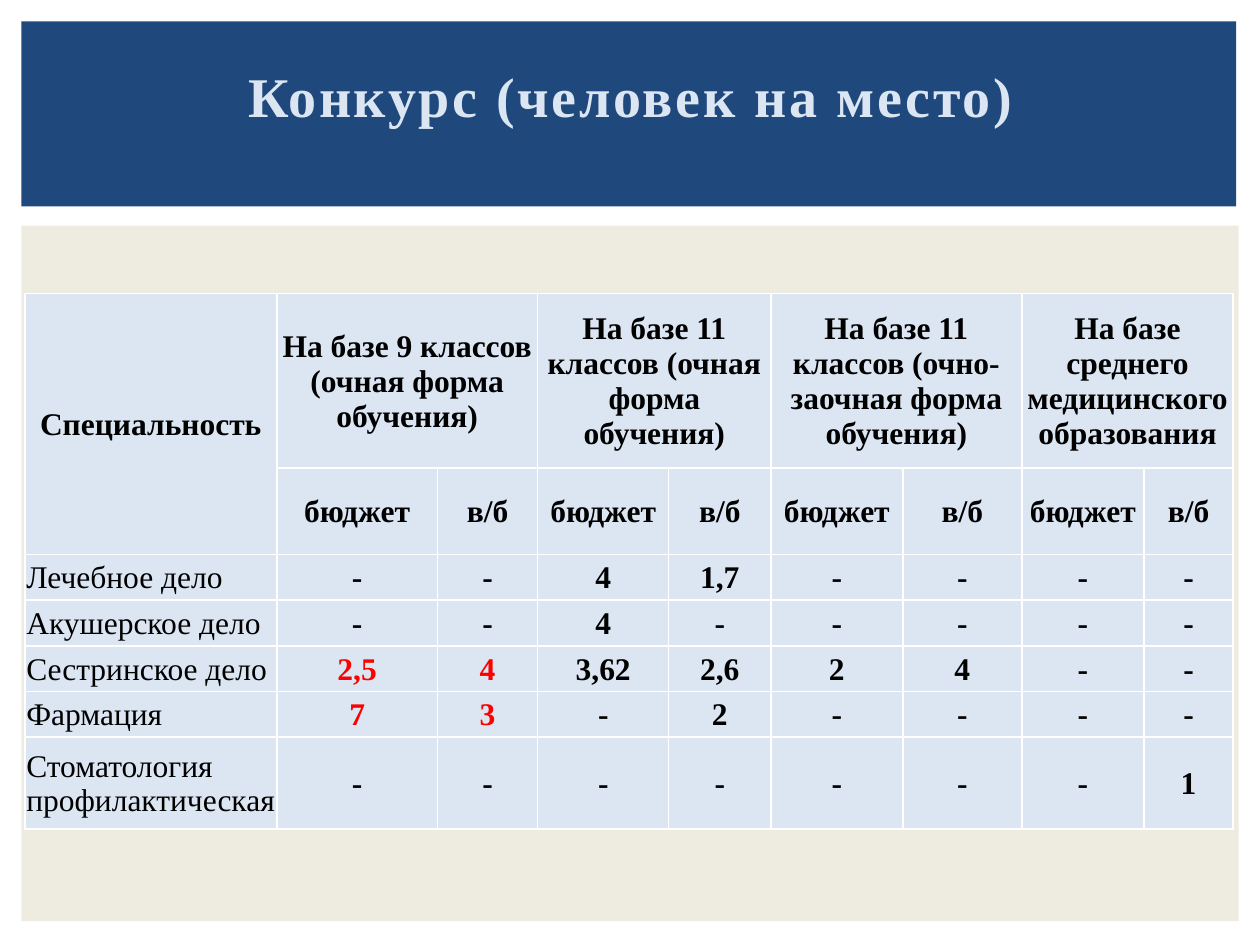
from lxml.etree import SubElement
from pptx import Presentation
from pptx.dml.color import RGBColor
from pptx.enum.shapes import MSO_SHAPE as SHAPE
from pptx.enum.text import MSO_ANCHOR as ANCHOR, PP_ALIGN as ALIGN
from pptx.oxml.ns import qn
from pptx.util import Cm, Pt

FONT = "Times New Roman"
COLORS = {
    "banner": "1F497D",
    "panel": "EEECE1",
    "pale": "DCE6F2",
    "text": "000000",
    "accent": "FF0000",
    "border": "FFFFFF",
}

COL_WIDTHS = [5.08, 3.24, 2.02, 2.64, 2.06, 2.66, 2.4, 2.46, 1.8]
ROW_HEIGHTS = [3.51, 1.75, 0.92, 0.92, 0.92, 0.92, 1.85]
GROUPS = [
    "На базе 9 классов (очная форма обучения)",
    "На базе 11 классов (очная форма обучения)",
    "На базе 11 классов (очно-заочная форма обучения)",
    "На базе среднего медицинского образования",
]
PLACES = ["бюджет", "в/б"]
SPECIALTIES = [
    ("Лечебное дело", "- - 4 1,7 - - - -"),
    ("Акушерское дело", "- - 4 - - - - -"),
    ("Сестринское дело", "2,5 4 3,62 2,6 2 4 - -"),
    ("Фармация", "7 3 - 2 - - - -"),
    ("Стоматология профилактическая", "- - - - - - - 1"),
]


def rgb(name):
    return RGBColor.from_string(COLORS[name])


def write(tf, text, size=18, color="text", bold=True, align=ALIGN.CENTER, spacing=None):
    p = tf.paragraphs[0]
    p.alignment = align
    r = p.add_run()
    r.text = text
    r.font.name, r.font.size, r.font.bold = FONT, Pt(size), bold
    r.font.color.rgb = rgb(color)
    if spacing:
        r.font._element.set("spc", str(int(spacing * 100)))
    return p


def add_block(slide, left, top, width, height, color):
    sp = slide.shapes.add_shape(SHAPE.RECTANGLE, Cm(left), Cm(top), Cm(width), Cm(height))
    sp.shadow.inherit = False
    sp.fill.solid()
    sp.fill.fore_color.rgb = rgb(color)
    sp.line.fill.background()


def add_banner(slide, left, top, width, height):
    add_block(slide, left, top, width, height, "banner")
    box = slide.shapes.add_textbox(Cm(left + 0.43), Cm(top + 0.69), Cm(width - 1.09), Cm(2.21))
    tf = box.text_frame
    tf.word_wrap = True
    tf.vertical_anchor = ANCHOR.TOP
    p = write(tf, "Конкурс (человек на место)", size=32, color="pale", spacing=1.5)
    p._p.get_or_add_pPr().set("marL", str(Cm(0.3)))


def style_cell(cell):
    cell.fill.solid()
    cell.fill.fore_color.rgb = rgb("pale")
    cell.vertical_anchor = ANCHOR.MIDDLE
    cell.margin_left = cell.margin_top = cell.margin_right = Cm(0.03)
    cell.margin_bottom = 0
    # Borders go before the fill
    tcPr = cell._tc.get_or_add_tcPr()
    for i, side in enumerate(("lnL", "lnR", "lnT", "lnB")):
        ln = SubElement(tcPr, qn(f"a:{side}"), w=str(Pt(1)))
        fill = SubElement(ln, qn("a:solidFill"))
        SubElement(fill, qn("a:srgbClr"), val=COLORS["border"])
        tcPr.insert(i, ln)


def add_competition_table(slide, left, top):
    frame = slide.shapes.add_table(len(ROW_HEIGHTS), len(COL_WIDTHS), Cm(left), Cm(top),
                                   Cm(sum(COL_WIDTHS)), Cm(sum(ROW_HEIGHTS)))
    table = frame.table
    table.first_row = table.horz_banding = False
    for col, width in zip(table.columns, COL_WIDTHS):
        col.width = Cm(width)
    for row, height in zip(table.rows, ROW_HEIGHTS):
        row.height = Cm(height)
    for cell in table.iter_cells():
        style_cell(cell)

    # Two-level header
    table.cell(0, 0).merge(table.cell(1, 0))
    write(table.cell(0, 0).text_frame, "Специальность")
    for i, group in enumerate(GROUPS):
        c = 1 + 2 * i
        table.cell(0, c).merge(table.cell(0, c + 1))
        write(table.cell(0, c).text_frame, group)
        for j, place in enumerate(PLACES):
            write(table.cell(1, c + j).text_frame, place)

    # Specialties: figures after 9 classes are highlighted
    for r, (name, values) in enumerate(SPECIALTIES, 2):
        write(table.cell(r, 0).text_frame, name, bold=False, align=ALIGN.LEFT)
        for c, value in enumerate(values.split(), 1):
            color = "accent" if c <= 2 and value != "-" else "text"
            write(table.cell(r, c).text_frame, value, color=color)


def main():
    prs = Presentation()
    prs.slide_width, prs.slide_height = Cm(25.4), Cm(19.05)
    slide = prs.slides.add_slide(prs.slide_layouts[6])
    add_block(slide, 0.43, 4.55, 24.54, 14.02, "panel")
    add_banner(slide, 0.43, 0.43, 24.49, 3.73)
    add_competition_table(slide, 0.5, 5.92)
    prs.save("out.pptx")


if __name__ == "__main__":
    main()
